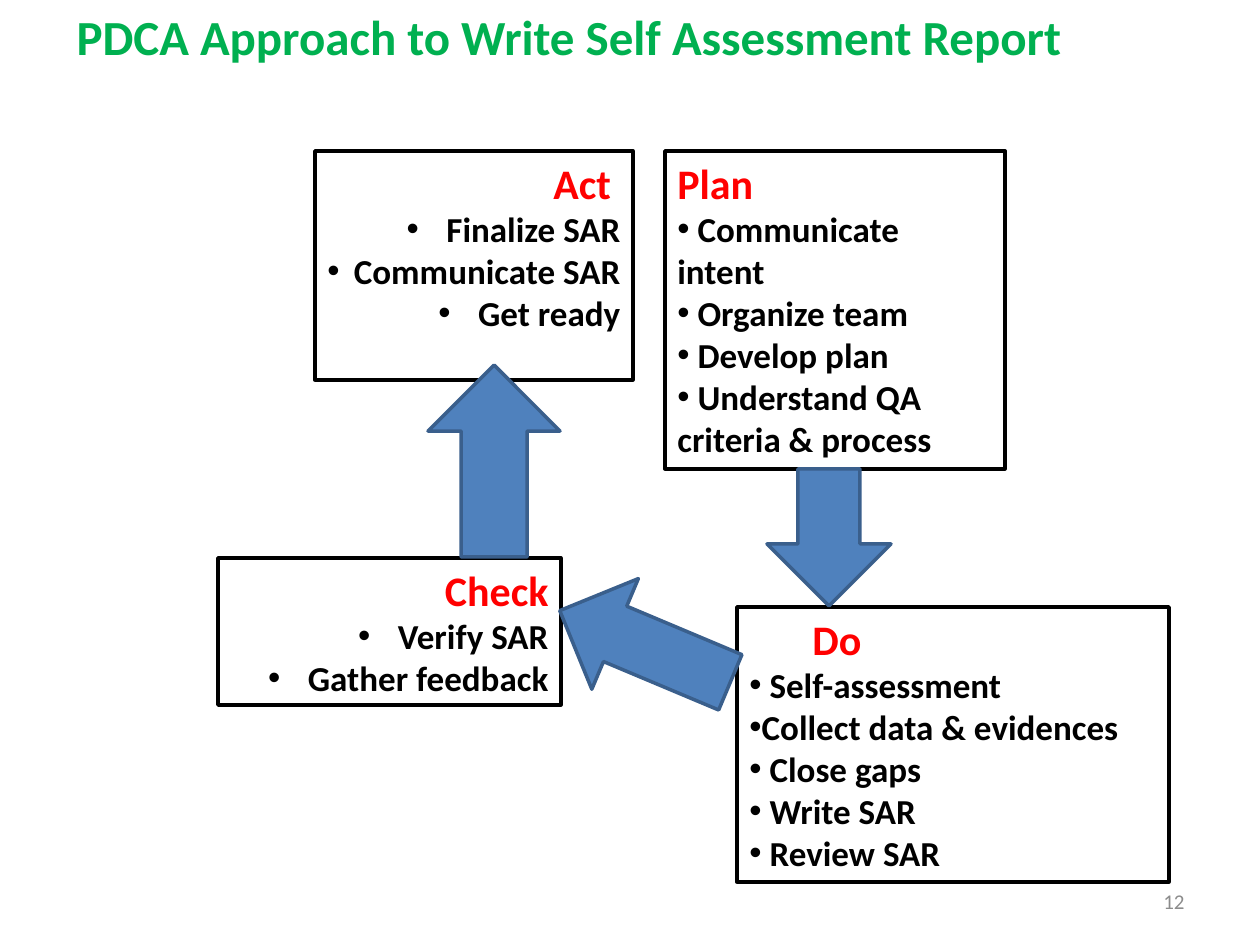
from dataclasses import dataclass

from lxml.etree import SubElement
from pptx import Presentation
from pptx.dml.color import RGBColor
from pptx.enum.shapes import MSO_SHAPE
from pptx.enum.text import MSO_ANCHOR, MSO_AUTO_SIZE, PP_ALIGN
from pptx.oxml.ns import qn
from pptx.util import Emu, Pt

PX = 914400 / 126


def px(n):
    return Emu(round(n * PX))


@dataclass(frozen=True)
class Theme:
    font: str = "Calibri"
    title: str = "00B050"
    heading: str = "FF0000"
    text: str = "000000"
    paper: str = "FFFFFF"
    arrow: str = "4F81BD"
    arrow_edge: str = "3A5F8C"
    muted: str = "8C8C8C"
    title_pt: int = 28
    heading_pt: int = 24
    item_pt: int = 20
    number_pt: int = 12
    line_pt: int = 2


class Deck:
    def __init__(self, theme):
        self.theme = theme
        self.prs = Presentation()
        self.prs.slide_width, self.prs.slide_height = px(1260), px(945)
        self.s = None

    def add_slide(self):
        self.s = self.prs.slides.add_slide(self.prs.slide_layouts[5])

    def style_text(self, p, text, size, color, bold=True, align=PP_ALIGN.LEFT):
        p.text = text
        p.alignment = align
        for r in p.runs:
            r.font.name = self.theme.font
            r.font.size = Pt(size)
            r.font.bold = bold
            r.font.color.rgb = RGBColor.from_string(color)

    def indent(self, p, left, first):
        pPr = p._p.get_or_add_pPr()
        pPr.set("marL", str(px(left)))
        pPr.set("indent", str(px(first)))
        return pPr

    def bullet(self, p, hang):
        pPr = self.indent(p, 0, -hang)
        SubElement(pPr, qn("a:buFont"), typeface="Arial")
        SubElement(pPr, qn("a:buChar"), char="•")

    def title(self, text, x, y, w, h):
        sp = self.s.shapes.title
        sp.left, sp.top, sp.width, sp.height = map(px, (x, y, w, h))
        tf = sp.text_frame
        tf.auto_size = MSO_AUTO_SIZE.NONE
        tf.vertical_anchor = MSO_ANCHOR.TOP
        self.style_text(tf.paragraphs[0], text, self.theme.title_pt, self.theme.title)

    def page_number(self, text, x, y, w, h):
        tf = self.s.shapes.add_textbox(*map(px, (x, y, w, h))).text_frame
        tf.word_wrap = True
        tf.vertical_anchor = MSO_ANCHOR.MIDDLE
        self.style_text(tf.paragraphs[0], text, self.theme.number_pt, self.theme.muted,
                        bold=False, align=PP_ALIGN.RIGHT)

    def shape(self, kind, x, y, w, h, fill, line):
        sp = self.s.shapes.add_shape(kind, *map(px, (x, y, w, h)))
        sp.shadow.inherit = False
        sp.fill.solid()
        sp.fill.fore_color.rgb = RGBColor.from_string(fill)
        sp.line.color.rgb = RGBColor.from_string(line)
        sp.line.width = Pt(self.theme.line_pt)
        return sp

    def stage(self, heading, items, x, y, w, h, align=PP_ALIGN.LEFT, hang=0, inset=0):
        t = self.theme
        tf = self.shape(MSO_SHAPE.RECTANGLE, x, y, w, h, t.paper, t.text).text_frame
        tf.word_wrap = True
        tf.vertical_anchor = MSO_ANCHOR.TOP
        p = tf.paragraphs[0]
        self.style_text(p, heading, t.heading_pt, t.heading, align=align)
        self.indent(p, inset, 0)
        for item in items:
            p = tf.add_paragraph()
            self.style_text(p, item, t.item_pt, t.text, align=align)
            self.bullet(p, hang)

    def arrow(self, x, y, w, h, angle=0):
        sp = self.shape(MSO_SHAPE.DOWN_ARROW, x, y, w, h,
                        self.theme.arrow, self.theme.arrow_edge)
        sp.rotation = angle


def main():
    deck = Deck(Theme())
    deck.add_slide()
    deck.title("PDCA Approach to Write Self Assessment Report", 64, 0, 1113, 237)
    deck.page_number("12", 903, 876, 294, 50)

    right = {"align": PP_ALIGN.RIGHT, "hang": 32}
    deck.stage("Check", [" Verify SAR", " Gather feedback"], 218, 558, 343, 147, **right)
    deck.stage("Do", [" Self-assessment", "Collect data & evidences", " Close gaps",
                      " Write SAR", " Review SAR"], 737, 607, 432, 275, inset=63)
    deck.stage("Plan", [" Communicate \vintent", " Organize team", " Develop plan",
                        " Understand QA criteria & process"], 665, 151, 340, 318)
    deck.stage("Act ", [" Finalize SAR", " Communicate SAR", " Get ready"],
               315, 151, 318, 229, **right)

    deck.arrow(767, 469, 124, 137)
    deck.arrow(428, 365, 132, 192, angle=180)
    deck.arrow(585, 554, 120, 185, angle=112.8)
    deck.prs.save("out.pptx")


if __name__ == "__main__":
    main()
